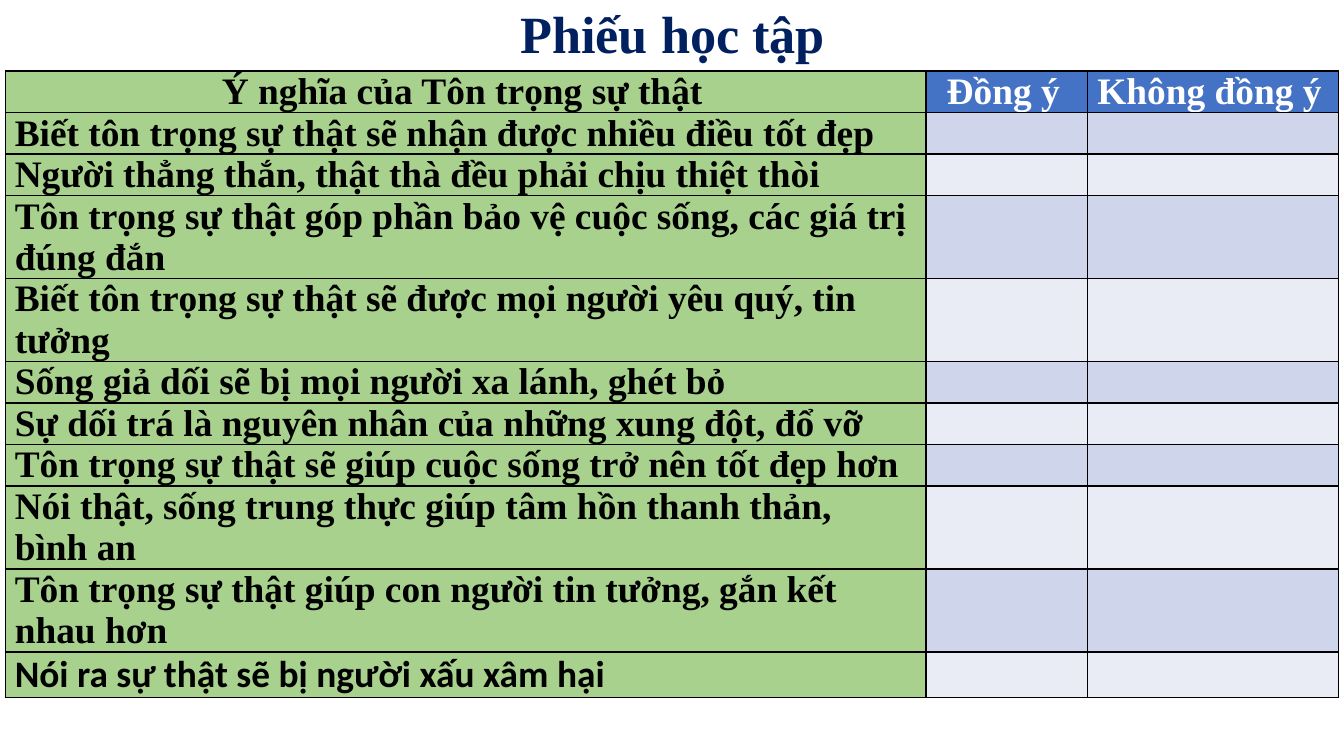
from lxml.etree import SubElement
from pptx import Presentation
from pptx.dml.color import RGBColor
from pptx.enum.text import MSO_ANCHOR, MSO_AUTO_SIZE, PP_ALIGN
from pptx.oxml.ns import qn
from pptx.util import Inches, Pt

BLACK = RGBColor(0x00, 0x00, 0x00)
WHITE = RGBColor(0xFF, 0xFF, 0xFF)
NAVY = RGBColor(0x00, 0x20, 0x60)
GREEN = RGBColor(0xA9, 0xD1, 0x8E)
BLUE = RGBColor(0x44, 0x72, 0xC4)
BANDS = (RGBColor(0xCF, 0xD5, 0xEA), RGBColor(0xE9, 0xEB, 0xF5))

SERIF, SANS = "Times New Roman", "Calibri"
COLUMN_WIDTHS = (6.85, 1.2, 1.87)
LINE_HEIGHT = 0.3

HEADINGS = ("Ý nghĩa của Tôn trọng sự thật", "Đồng ý", "Không đồng ý")
# Each statement with the number of lines it fills and its font
STATEMENTS = (
    ("Biết tôn trọng sự thật sẽ nhận được nhiều điều tốt đẹp", 1, SERIF),
    ("Người thẳng thắn, thật thà đều phải chịu thiệt thòi", 1, SERIF),
    ("Tôn trọng sự thật góp phần bảo vệ cuộc sống, các giá trị đúng đắn", 2, SERIF),
    ("Biết tôn trọng sự thật sẽ được mọi người yêu quý, tin tưởng", 2, SERIF),
    ("Sống giả dối sẽ bị mọi người xa lánh, ghét bỏ", 1, SERIF),
    ("Sự dối trá là nguyên nhân của những xung đột, đổ vỡ", 1, SERIF),
    ("Tôn trọng sự thật sẽ giúp cuộc sống trở nên tốt đẹp hơn", 1, SERIF),
    ("Nói thật, sống trung thực giúp tâm hồn thanh thản, bình an", 2, SERIF),
    ("Tôn trọng sự thật giúp con người tin tưởng, gắn kết nhau hơn", 2, SERIF),
    ("Nói ra sự thật sẽ bị người xấu xâm hại", 1, SANS),
)


def write_text(frame, text, *, size=20, font=SERIF, color=BLACK, align=PP_ALIGN.LEFT):
    paragraph = frame.paragraphs[0]
    paragraph.alignment = align
    run = paragraph.add_run()
    run.text = text
    run.font.name = font
    run.font.size = Pt(size)
    run.font.bold = True
    run.font.color.rgb = color


def add_borders(cell, color=BLACK, width=1):
    """Line all four sides; borders must come before the fill in tcPr."""
    properties = cell._tc.get_or_add_tcPr()
    for side in ("a:lnL", "a:lnR", "a:lnT", "a:lnB"):
        line = SubElement(properties, qn(side), w=str(Pt(width)))
        fill = SubElement(line, qn("a:solidFill"))
        SubElement(fill, qn("a:srgbClr"), val=str(color))


class Worksheet:
    def __init__(self, presentation):
        self.slide = presentation.slides.add_slide(presentation.slide_layouts[5])

    def title(self, text, left, top, width, height):
        title = self.slide.shapes.title
        title.left, title.top = Inches(left), Inches(top)
        title.width, title.height = Inches(width), Inches(height)
        frame = title.text_frame
        frame.word_wrap = True
        frame.auto_size = MSO_AUTO_SIZE.NONE
        frame.vertical_anchor = MSO_ANCHOR.TOP
        write_text(frame, text, size=28, color=NAVY, align=PP_ALIGN.CENTER)

    def cell(self, cell, fill, text="", **text_format):
        cell.margin_left, cell.margin_right = Inches(0.07), Inches(0.12)
        cell.margin_top = cell.margin_bottom = 0
        add_borders(cell)
        cell.fill.solid()
        cell.fill.fore_color.rgb = fill
        if text:
            write_text(cell.text_frame, text, **text_format)

    def opinion_table(self, left, top):
        line_counts = [1] + [lines for _, lines, _ in STATEMENTS]
        table = self.slide.shapes.add_table(
            len(line_counts), len(COLUMN_WIDTHS), Inches(left), Inches(top),
            Inches(sum(COLUMN_WIDTHS)), Inches(LINE_HEIGHT * sum(line_counts)),
        ).table
        for column, width in zip(table.columns, COLUMN_WIDTHS):
            column.width = Inches(width)
        for row, lines in zip(table.rows, line_counts):
            row.height = Inches(LINE_HEIGHT * lines)

        for column, heading in enumerate(HEADINGS):
            fill, color = (BLUE, WHITE) if column else (GREEN, BLACK)
            self.cell(table.cell(0, column), fill, heading,
                      color=color, align=PP_ALIGN.CENTER)
        for row, (statement, _, font) in enumerate(STATEMENTS, start=1):
            self.cell(table.cell(row, 0), GREEN, statement, font=font)
            for column in (1, 2):
                self.cell(table.cell(row, column), BANDS[(row - 1) % 2])


def main():
    presentation = Presentation()
    presentation.slide_width = Inches(10)
    presentation.slide_height = presentation.slide_width * 9 // 16
    worksheet = Worksheet(presentation)
    worksheet.opinion_table(0.04, 0.53)
    worksheet.title("Phiếu học tập", 2.09, -0.04, 5.83, 0.57)
    presentation.save("out.pptx")


if __name__ == "__main__":
    main()
